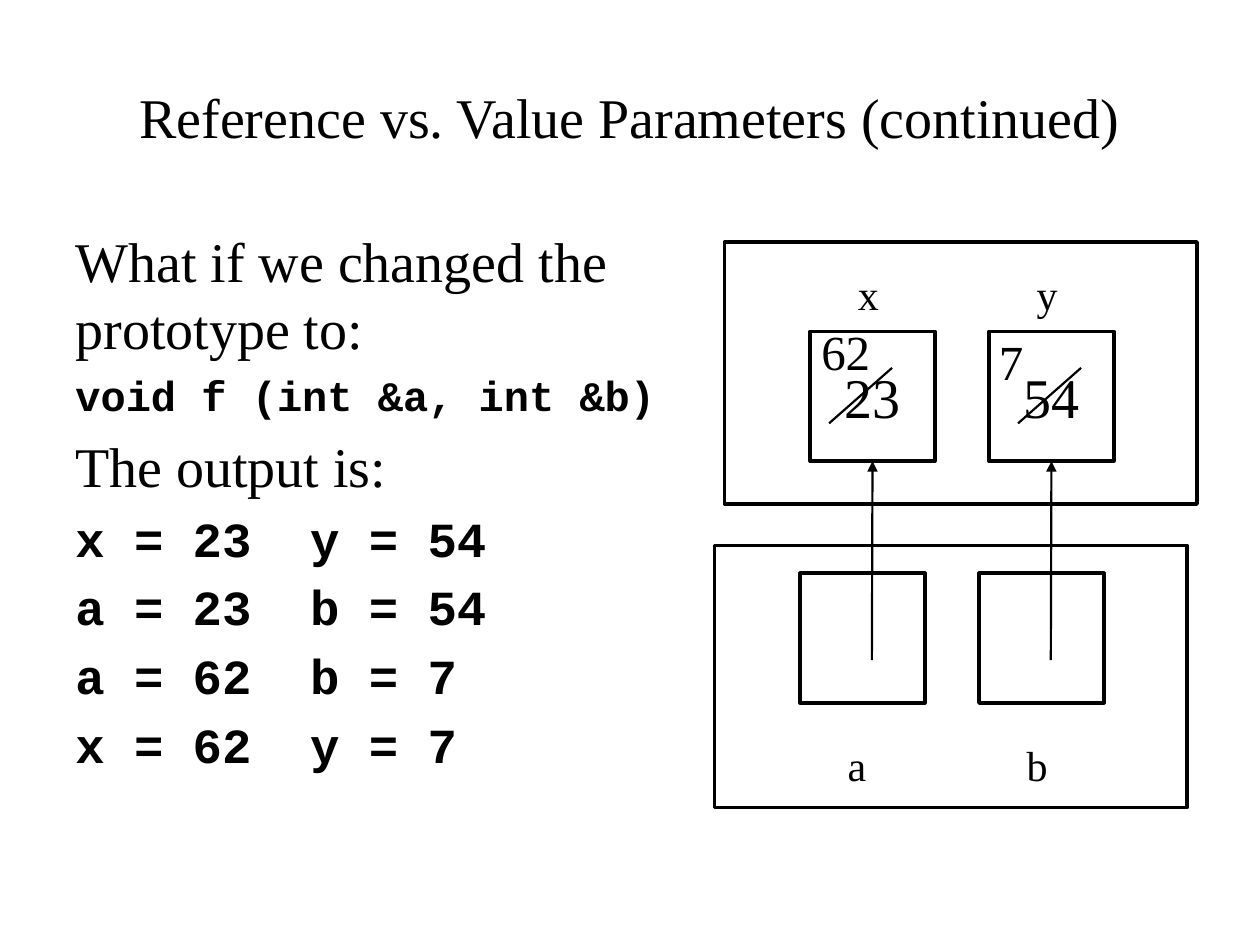
import dataclasses
import pptx
import pptx.dml.color
import pptx.enum.shapes
import pptx.enum.text
import pptx.oxml
import pptx.oxml.ns
import pptx.util
from pptx.util import Inches

SERIF = "Times New Roman"
MONO = "Courier New"
BLACK = "000000"
WHITE = "FFFFFF"
ALIGN = pptx.enum.text.PP_ALIGN
ANCHOR = pptx.enum.text.MSO_ANCHOR
STEP = 1.42  # gap between the two variable columns


@dataclasses.dataclass
class Line:
    text: str
    size: int
    font: str = SERIF
    bold: bool = False


@dataclasses.dataclass
class Var:
    name: str
    value: str = ""


@dataclasses.dataclass
class Frame:
    left: float
    top: float
    box_top: float
    name_top: float
    vars: list[Var]


@dataclasses.dataclass
class Change:
    value: str
    left: float
    top: float
    width: float
    slash: float


def color(code: str) -> pptx.dml.color.RGBColor:
    return pptx.dml.color.RGBColor.from_string(code)


def add_run(para, line: Line) -> None:
    run = para.add_run()
    run.text = line.text
    run.font.size = pptx.util.Pt(line.size)
    run.font.name = line.font
    run.font.bold = line.bold
    run.font.color.rgb = color(BLACK)


def add_text(slide, left: float, top: float, width: float, height: float,
             lines: list[Line], wrap: bool = True):
    box = slide.shapes.add_textbox(Inches(left), Inches(top), Inches(width), Inches(height))
    frame = box.text_frame
    frame.word_wrap = wrap
    for i, line in enumerate(lines):
        para = frame.paragraphs[0] if i == 0 else frame.add_paragraph()
        add_run(para, line)
    return frame


def add_rect(slide, left: float, top: float, width: float, height: float, text: str = ""):
    rect = slide.shapes.add_shape(pptx.enum.shapes.MSO_SHAPE.RECTANGLE, Inches(left),
                                  Inches(top), Inches(width), Inches(height))
    rect.shadow.inherit = False
    rect.fill.solid()
    rect.fill.fore_color.rgb = color(WHITE)
    rect.line.color.rgb = color(BLACK)
    rect.line.width = pptx.util.Pt(2)
    if text:
        rect.text_frame.vertical_anchor = ANCHOR.MIDDLE
        para = rect.text_frame.paragraphs[0]
        para.alignment = ALIGN.CENTER
        add_run(para, Line(text, 32))
    return rect


def add_line(slide, x1: float, y1: float, x2: float, y2: float):
    line = slide.shapes.add_connector(pptx.enum.shapes.MSO_CONNECTOR.STRAIGHT, Inches(x1),
                                      Inches(y1), Inches(x2), Inches(y2))
    line.line.color.rgb = color(BLACK)
    line.line.width = pptx.util.Pt(1.25)
    props = line._element.spPr
    props.append(pptx.oxml.parse_xml(f'<a:effectLst {pptx.oxml.ns.nsdecls("a")}/>'))
    return line


def add_arrow(slide, x: float, y: float, box) -> None:
    line = add_line(slide, x, y, x, y - 1.57)
    line.end_connect(box, 2)
    line.line._get_or_add_ln().append(pptx.oxml.parse_xml(
        f'<a:tailEnd {pptx.oxml.ns.nsdecls("a")} type="triangle"/>'))


def add_frame(slide, frame: Frame) -> list:
    add_rect(slide, frame.left, frame.top, 3.75, 2.08)
    boxes = []
    for i, var in enumerate(frame.vars):
        left = frame.left + 0.68 + i * STEP
        boxes.append(add_rect(slide, left, frame.box_top, 0.99, 1.03, var.value))
        add_text(slide, left + 0.28, frame.name_top, 0.37, 0.5, [Line(var.name, 24)], False)
    return boxes


def space_lines(frame) -> None:
    """Put a fifth of a line before each paragraph."""
    for para in frame.paragraphs:
        para._p.get_or_add_pPr().append(pptx.oxml.parse_xml(
            f'<a:spcBef {pptx.oxml.ns.nsdecls("a")}><a:spcPct val="20000"/></a:spcBef>'))


def main() -> None:
    deck = pptx.Presentation()
    deck.slide_width, deck.slide_height = Inches(10), Inches(7.5)
    slide = deck.slides.add_slide(deck.slide_layouts[6])

    # Title
    title = add_text(slide, 0.5, 0.3, 9, 1.25,
                     [Line("Reference vs. Value Parameters (continued)", 32)])
    title.vertical_anchor = ANCHOR.MIDDLE
    title.paragraphs[0].alignment = ALIGN.CENTER

    # Prototype and output
    output = ["x = 23  y = 54", "a = 23  b = 54", "a = 62  b = 7", "x = 62  y = 7"]
    body = add_text(slide, 0.5, 1.75, 4.83, 4.95, [
        Line("What if we changed the prototype to:", 32),
        Line("void f (int &a, int &b)", 24, MONO, True),
        Line("The output is:", 32),
        *[Line(text, 28, MONO, True) for text in output],
    ])
    space_lines(body)

    # Memory of the caller and of the function
    boxes = add_frame(slide, Frame(5.75, 1.92, 2.63, 2.08, [Var("x", "23"), Var("y", "54")]))
    add_frame(slide, Frame(5.67, 4.33, 4.55, 5.82, [Var("a"), Var("b")]))

    # Old values struck out, new values above
    for new in [Change("62", 6.42, 2.5, 0.67, 6.58), Change("7", 7.83, 2.58, 0.4, 8.08)]:
        add_line(slide, new.slash, 3.36, new.slash + 0.5, 2.92)
        add_text(slide, new.left, new.top, new.width, 0.57, [Line(new.value, 28)])

    # References to the caller's variables
    for i, box in enumerate(boxes):
        add_arrow(slide, 6.92 + i * STEP, 5.24, box)

    deck.save("out.pptx")


if __name__ == "__main__":
    main()
